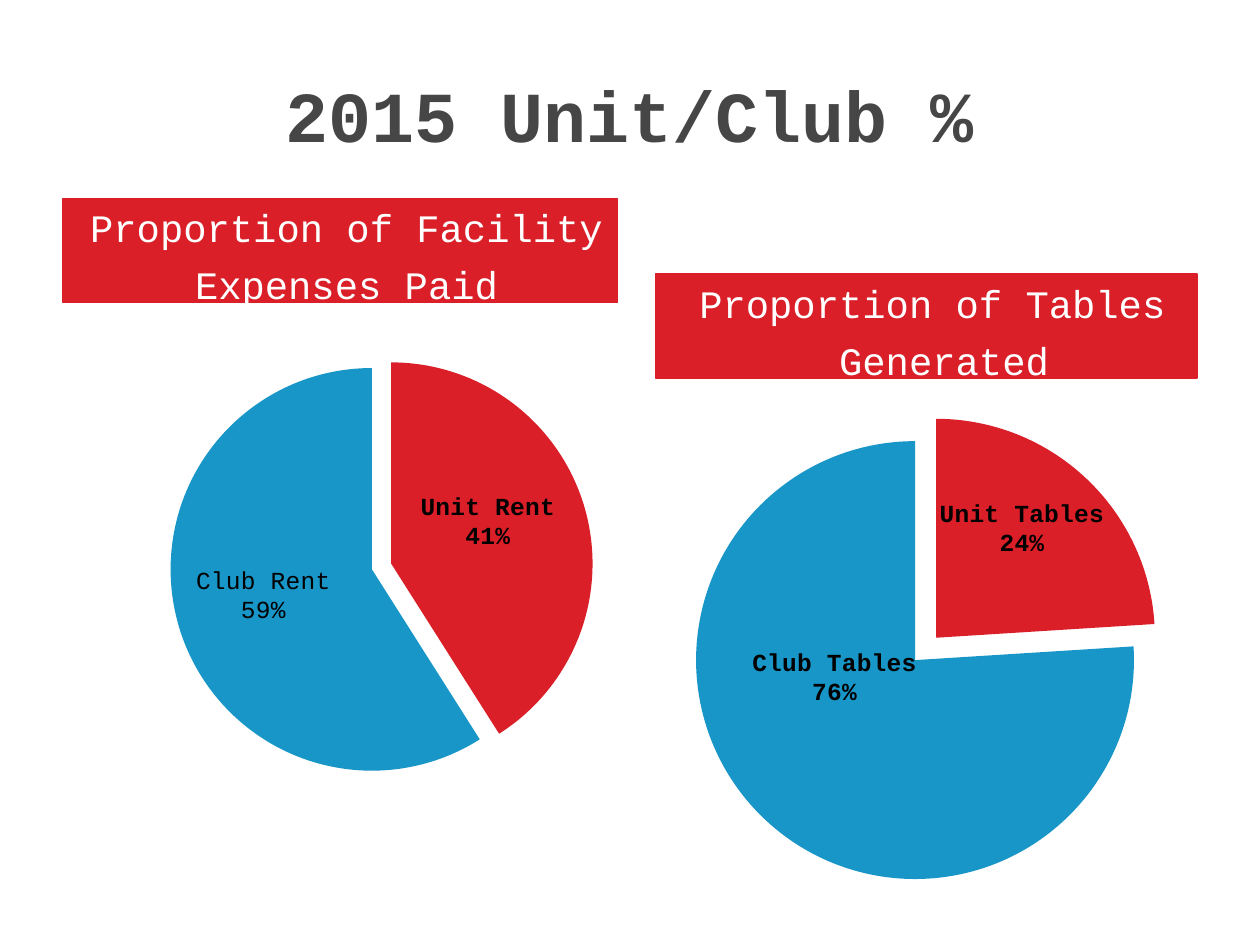
from dataclasses import dataclass
from lxml.etree import SubElement
from pptx import Presentation
from pptx.chart.data import CategoryChartData
from pptx.dml.color import RGBColor
from pptx.enum.chart import XL_CHART_TYPE, XL_LABEL_POSITION
from pptx.enum.shapes import MSO_SHAPE
from pptx.enum.text import MSO_ANCHOR, PP_ALIGN
from pptx.oxml.ns import qn
from pptx.util import Inches, Pt

WIDE, HIGH = 10, 7.5
FONT = "Courier New"
RED, BLUE, GREY, WHITE, BLACK = "DA1F28", "1896C8", "464646", "FFFFFF", "000000"


@dataclass
class Box:
    """A place in shares of the slide's size."""
    left: float
    top: float
    width: float
    height: float

    def place(self) -> list:
        return [Inches(self.left * WIDE), Inches(self.top * HIGH),
                Inches(self.width * WIDE), Inches(self.height * HIGH)]


@dataclass
class Slice:
    name: str
    value: int
    fill: str
    burst: int      # percent of the radius
    shift: tuple    # label offset in shares of the chart
    bold: bool = True


@dataclass
class Panel:
    lines: list
    banner: Box
    chart: Box
    plot: tuple     # x, y, w, h in shares of the chart
    slices: list


PANELS = [
    Panel(["Proportion of Facility", "Expenses Paid"],
          Box(0.05, 0.21, 0.44, 0.11), Box(-0.25, 0.2, 0.94, 0.66),
          (0.41, 0.28, 0.34, 0.66),
          [Slice("Unit Rent", 41, RED, 10, (0, -0.02)),
           Slice("Club Rent", 59, BLUE, 0, (-0.01, 0), False)]),
    Panel(["Proportion of Tables", " Generated"],
          Box(0.52, 0.29, 0.43, 0.11), Box(0.53, 0.42, 0.44, 0.58),
          (0.07, 0.06, 0.79, 0.8),
          [Slice("Unit Tables", 24, RED, 7, (0.02, -0.05)),
           Slice("Club Tables", 76, BLUE, 7, (-0.01, -0.11))]),
]


def tint(code: str) -> RGBColor:
    return RGBColor.from_string(code)


def style(font, size: float, code: str, bold: bool = False) -> None:
    font.name, font.size, font.bold = FONT, Pt(size), bold
    font.color.rgb = tint(code)


def write(frame, lines: list, size: float, code: str, bold: bool = False) -> None:
    frame.word_wrap = True
    frame.vertical_anchor = MSO_ANCHOR.MIDDLE
    for row, line in enumerate(lines):
        para = frame.add_paragraph() if row else frame.paragraphs[0]
        para.alignment = PP_ALIGN.CENTER
        para.space_before = Pt(6 if row else 0)
        run = para.add_run()
        run.text = line
        style(run.font, size, code, bold)


def layout(parent, spot: int, **parts) -> None:
    """Give a chart part a manual layout as its child at the given spot."""
    for old in parent.findall(qn("c:layout")):
        parent.remove(old)
    node = SubElement(parent, qn("c:layout"))
    parent.insert(spot, node)
    manual = SubElement(node, qn("c:manualLayout"))
    for key, value in parts.items():
        SubElement(manual, qn(f"c:{key}")).set("val", str(value))


def add_banner(slide, panel: Panel) -> None:
    shape = slide.shapes.add_shape(MSO_SHAPE.RECTANGLE, *panel.banner.place())
    shape.shadow.inherit = False
    shape.fill.solid()
    shape.fill.fore_color.rgb = tint(RED)
    shape.line.color.rgb = tint(RED)
    shape.line.width = Pt(0.75)
    frame = shape.text_frame
    frame.margin_left, frame.margin_top = Inches(0.2), Inches(0.13)
    write(frame, panel.lines, 22.2, WHITE)


def add_slice(series, spot: int, part: Slice) -> None:
    point = series.points[spot]
    point.format.fill.solid()
    point.format.fill.fore_color.rgb = tint(part.fill)
    point.format.line.fill.background()
    # Pull the slice out of the pie
    if part.burst:
        node = series._element.findall(qn("c:dPt"))[spot]
        burst = SubElement(node, qn("c:explosion"))
        burst.set("val", str(part.burst))
        node.find(qn("c:spPr")).addprevious(burst)
    # Label with name and share
    label = point.data_label
    style(label.font, 14, BLACK, part.bold)
    label.position = XL_LABEL_POSITION.CENTER
    node = series._element.findall(".//" + qn("c:dLbl"))[spot]
    for key, value in (("showVal", 0), ("showCatName", 1), ("showPercent", 1)):
        node.find(qn(f"c:{key}")).set("val", str(value))
    SubElement(node, qn("c:separator")).text = "\n"
    layout(node, 1, x=part.shift[0], y=part.shift[1])


def add_pie(slide, panel: Panel) -> None:
    data = CategoryChartData()
    data.categories = [part.name for part in panel.slices]
    data.add_series("Series 1", [part.value for part in panel.slices])
    chart = slide.shapes.add_chart(
        XL_CHART_TYPE.PIE, *panel.chart.place(), data).chart
    chart.has_title = chart.has_legend = False
    style(chart.font, 10, BLACK)
    plot = chart.plots[0]
    plot.vary_by_categories = True
    for spot, part in enumerate(panel.slices):
        add_slice(plot.series[0], spot, part)
    x, y, w, h = panel.plot
    layout(chart._chartSpace.chart.plotArea, 0, layoutTarget="inner",
           xMode="edge", yMode="edge", x=x, y=y, w=w, h=h)


def main() -> None:
    deck = Presentation()
    deck.slide_width, deck.slide_height = Inches(WIDE), Inches(HIGH)
    slide = deck.slides.add_slide(deck.slide_layouts[5])
    # Title
    title = slide.shapes.title
    title.left, title.top, title.width, title.height = Box(
        0.19, 0.03, 0.62, 0.18).place()
    write(title.text_frame, ["2015 Unit/Club %"], 41, GREY, True)
    # Banners and pies
    for panel in PANELS:
        add_banner(slide, panel)
        add_pie(slide, panel)
    deck.save("out.pptx")


if __name__ == "__main__":
    main()
